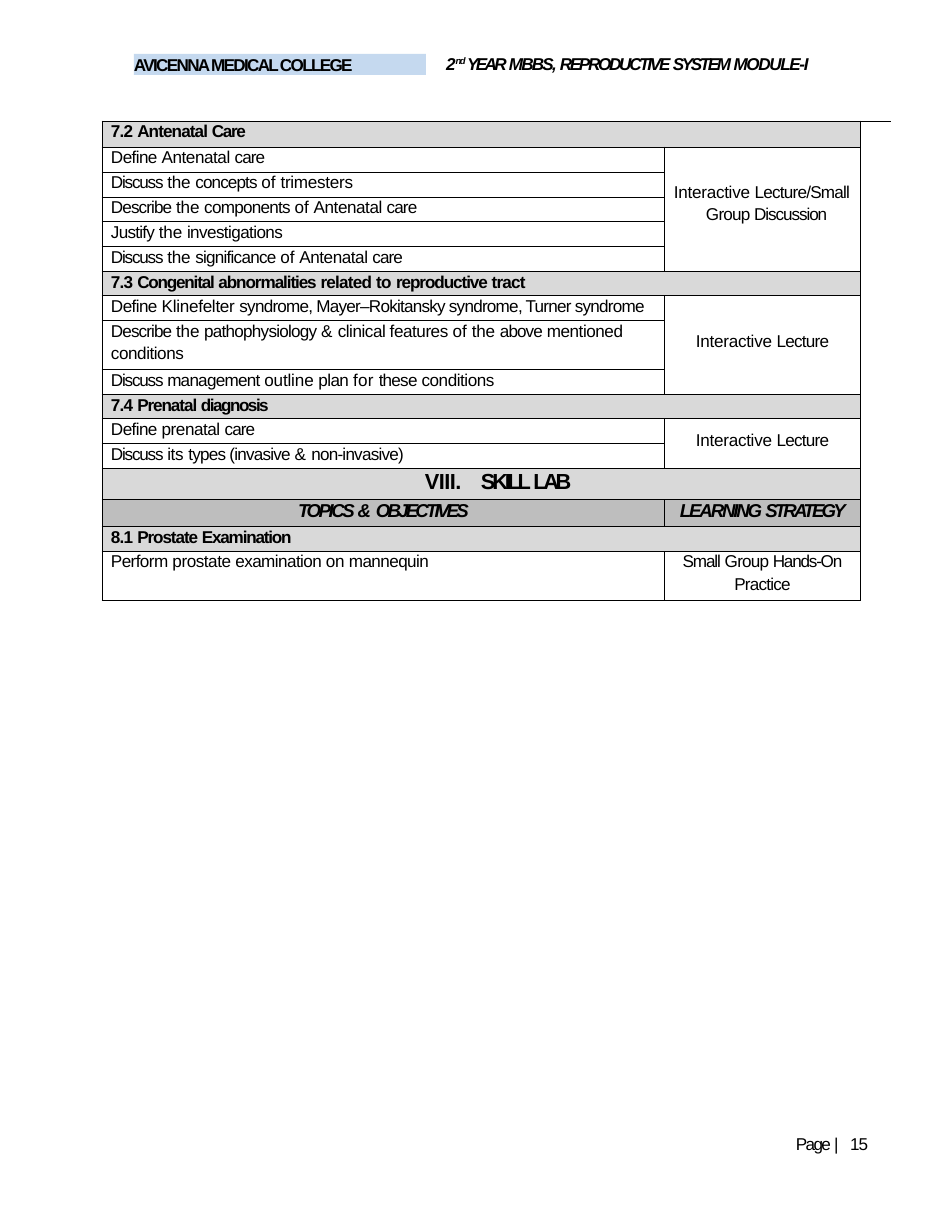
from dataclasses import dataclass

from lxml import etree
from pptx import Presentation
from pptx.dml.color import RGBColor
from pptx.enum.text import MSO_ANCHOR, MSO_AUTO_SIZE, PP_ALIGN
from pptx.oxml.ns import qn
from pptx.util import Emu, Pt

LEFT, CENTER = PP_ALIGN.LEFT, PP_ALIGN.CENTER
TOP, NO_AUTOFIT = MSO_ANCHOR.TOP, MSO_AUTO_SIZE.NONE
TITLE_ONLY = 5
EMU_PER_PX = 914400 / 112


@dataclass(frozen=True)
class Theme:
    font: str = "Arial"
    ink: str = "000000"
    banner: str = "C5D9EF"
    section: str = "D9D9D9"
    heading: str = "BEBEBE"
    body: float = 11
    superscript: float = 10.5
    heading_size: float = 12
    chapter_size: float = 14
    border: float = 0.5


THEME = Theme()


@dataclass
class Line:
    runs: list
    size: float = THEME.body
    bold: bool = False
    italic: bool = False
    align: int = LEFT
    indent: int = 9
    first: int = 0
    spacing: float = None
    before: float = 0
    tab: int = 0


@dataclass
class Row:
    height: int
    topic: list
    strategy: list = None
    span: int = 1
    margin: int = 0
    fill: str = None
    section: bool = False


def px(value):
    return Emu(round(value * EMU_PER_PX))


def write_lines(frame, lines):
    frame.word_wrap = True
    for index, line in enumerate(lines):
        paragraph = frame.paragraphs[0] if index == 0 else frame.add_paragraph()
        properties = paragraph._p.get_or_add_pPr()
        properties.set("marL", str(px(line.indent)))
        properties.set("indent", str(px(line.first)))
        paragraph.alignment = line.align
        if line.spacing:
            paragraph.line_spacing = line.spacing
        if line.before:
            paragraph.space_before = Pt(line.before)
        if line.tab:
            tabs = etree.SubElement(properties, qn("a:tabLst"))
            etree.SubElement(tabs, qn("a:tab"), pos=str(px(line.tab)), algn="l")
        for text, tracking, *baseline in line.runs:
            run = paragraph.add_run()
            run.text = text
            run.font.name = THEME.font
            run.font.size = Pt(THEME.superscript if baseline else line.size)
            run.font.bold, run.font.italic = line.bold, line.italic
            run.font.color.rgb = RGBColor.from_string(THEME.ink)
            run_properties = run._r.get_or_add_rPr()
            run_properties.set("spc", str(round(tracking * 100)))
            if baseline:
                run_properties.set("baseline", str(baseline[0] * 1000))


def set_margins(target, top=0):
    target.margin_left = target.margin_right = target.margin_bottom = 0
    target.margin_top = px(top)


def fill_text_shape(shape, line, top=0):
    frame = shape.text_frame
    frame.auto_size = NO_AUTOFIT
    frame.vertical_anchor = TOP
    set_margins(frame, top)
    write_lines(frame, [line])


def add_header(slide, left, top, width, height):
    banner = slide.shapes.add_textbox(px(left), px(top + 1), px(292), px(height - 1))
    banner.fill.solid()
    banner.fill.fore_color.rgb = RGBColor.from_string(THEME.banner)
    fill_text_shape(banner, Line([("AVICENNA MEDICAL COLLEGE", -1.1)], bold=True,
                                 indent=0, spacing=Pt(12.8)), 1)
    title = slide.shapes.title
    title.left, title.top = px(left + 311), px(top)
    title.width, title.height = px(width - 311), px(height)
    fill_text_shape(title, Line(
        [("2", -0.6), ("nd ", -0.9, 32), ("YEAR ", -1.7), ("MBBS, ", -1.2),
         ("REPRODUCTIVE ", -1.5), ("SYSTEM ", -1.6), ("MODULE-I", -0.9)],
        bold=True, italic=True, indent=1))


def add_footer(slide, left, top, width, height):
    footer = slide.shapes.add_textbox(px(left), px(top), px(width), px(height))
    fill_text_shape(footer, Line([("Page ", -1.1), ("| ", 2.2), ("15", -0.6)],
                                 indent=1, spacing=Pt(11.5)))


def set_borders(cell, **widths):
    properties = cell._tc.get_or_add_tcPr()
    for side in "LRTB":
        width = widths.get(side, 0)
        border = etree.SubElement(properties, qn(f"a:ln{side}"), w=str(Pt(width)))
        if width:
            solid = etree.SubElement(border, qn("a:solidFill"))
            etree.SubElement(solid, qn("a:srgbClr"), val=THEME.ink)
        else:
            etree.SubElement(border, qn("a:noFill"))


def set_fill(cell, color):
    if color:
        cell.fill.solid()
        cell.fill.fore_color.rgb = RGBColor.from_string(color)
    else:
        cell.fill.background()


def body_line(*runs, **options):
    return Line(list(runs), spacing=Pt(12.9), **options)


def objective(*runs, height=25, **options):
    return Row(height, [body_line(*runs)], **options)


def section(*runs, height=25):
    return Row(height, [body_line(*runs, bold=True)], fill=THEME.section, section=True)


def heading(*runs, **options):
    return Line(list(runs), size=THEME.heading_size, bold=True, italic=True,
                spacing=Pt(14.1), **options)


def syllabus_rows():
    define, discuss, describe = ("Define ", -0.4), ("Discuss ", -0.8), ("Describe ", -0.6)
    the, of = ("the ", -0.1), ("of ", 0)
    antenatal_care = [("Antenatal ", -0.3), ("care", -0.6)]
    lecture = [Line([("Interactive ", -0.2), ("Lecture", -0.5)], indent=32)]
    discussion = [Line([("Interactive ", -0.2), ("Lecture/Small Group", -0.5),
                        (" Discussion", -0.7)], indent=42, first=-32, spacing=1.17)]
    practice = [body_line(("Small ", -0.7), ("Group", -0.5), (" Hands-On", -0.8),
                          align=CENTER, indent=1),
                Line([("Practice", -0.5)], align=CENTER, indent=1, before=2.2)]
    return [
        section(("7.2 ", -0.5), ("Antenatal ", -0.6), ("Care", -0.9), height=26),
        objective(define, *antenatal_care, strategy=discussion, span=5, margin=33),
        objective(discuss, the, ("concepts ", -0.6), of, ("trimesters", -0.2)),
        objective(describe, the, ("components ", -0.5), of, *antenatal_care),
        objective(("Justify ", -0.5), the, ("investigations", -0.4)),
        objective(discuss, the, ("significance ", -0.5), of, *antenatal_care),
        section(("7.3 ", -0.5), ("Congenital ", -0.8), ("abnormalities ", -0.7),
                ("related ", -0.5), ("to ", -0.3), ("reproductive ", -0.7),
                ("tract", -0.5), height=24),
        objective(define, ("Klinefelter ", -0.2),
                  ("syndrome, Mayer–Rokitansky syndrome, Turner syndrome", -0.5),
                  strategy=lecture, span=3, margin=36),
        Row(49, [body_line(describe, the, ("pathophysiology ", -0.5), ("& ", 0.1),
                           ("clinical features ", -0.3), of, the, ("above ", -0.6),
                           ("mentioned", -0.3)),
                 Line([("conditions", -0.3)], before=2.2)]),
        objective(discuss, ("management ", -0.5), ("outline ", -0.1), ("plan ", -0.4),
                  ("for ", 0.1), ("these ", -0.5), ("conditions", -0.3)),
        section(("7.4 ", -0.5), ("Prenatal ", -0.7), ("diagnosis", -1), height=24),
        objective(define, ("prenatal ", -0.3), ("care", -0.6),
                  strategy=lecture, span=2, margin=12),
        objective(discuss, ("its ", -0.2), ("types (invasive ", -0.5), ("& ", 0.1),
                  ("non-invasive)", -0.5)),
        Row(31, [Line([("VIII.\t", -0.4), ("SKILL ", -2.1), ("LAB", -2.2)],
                      size=THEME.chapter_size, bold=True, indent=323, tab=435,
                      spacing=Pt(16.5))], fill=THEME.section, section=True),
        Row(27, [heading(("TOPICS ", -1.6), ("& ", -0.2), ("OBJECTIVES", -1.8),
                         align=CENTER, indent=1)],
            [heading(("LEARNING ", -1.4), ("STRATEGY", -1.8), indent=16)],
            fill=THEME.heading),
        section(("8.1 ", -0.5), ("Prostate ", -0.7), ("Examination", -0.8)),
        objective(("Perform ", -0.4), ("prostate ", -0.3), ("examination ", -0.4),
                  ("on ", -0.3), ("mannequin", -0.4), height=49, strategy=practice),
    ]


def add_syllabus(slide, left, top, width, height):
    rows = syllabus_rows()
    table = slide.shapes.add_table(len(rows), 3, px(left), px(top),
                                   px(width), px(height)).table
    table.first_row = table.horz_banding = False
    for column, column_width in zip(table.columns, (562, 196, width - 758)):
        column.width = px(column_width)
    thin = THEME.border
    span_end = 0
    for index, row in enumerate(rows):
        table.rows[index].height = px(row.height)
        topic, strategy, margin = (table.cell(index, column) for column in range(3))
        starts = row.section or bool(row.strategy)
        if starts:
            span_end = index + row.span - 1
        inner = 0 if row.section else thin
        set_borders(topic, L=thin, R=inner, T=thin, B=thin)
        set_borders(strategy, L=inner, R=thin, T=thin if starts else 0,
                    B=thin if index == span_end else 0)
        set_borders(margin, L=thin, T=0 if index else thin)
        for cell, color in ((topic, row.fill), (strategy, row.fill), (margin, None)):
            set_margins(cell)
            set_fill(cell, color)
        write_lines(topic.text_frame, row.topic)
        if row.strategy:
            strategy.margin_top = px(row.margin)
            write_lines(strategy.text_frame, row.strategy)
        for cell in (strategy, margin):
            etree.SubElement(cell.text_frame.paragraphs[-1]._p, qn("a:endParaRPr"),
                             sz=str(round(THEME.body * 100)))
    for index, row in enumerate(rows):
        if row.section:
            table.cell(index, 0).merge(table.cell(index, 1))
        elif row.span > 1:
            table.cell(index, 1).merge(table.cell(index + row.span - 1, 1))
    table.cell(0, 2).merge(table.cell(len(rows) - 1, 2))


def main():
    presentation = Presentation()
    presentation.slide_width, presentation.slide_height = px(952), px(1232)
    slide = presentation.slides.add_slide(presentation.slide_layouts[TITLE_ONLY])
    add_header(slide, 134, 53, 765, 22)
    add_syllabus(slide, 102, 121, 789, 480)
    add_footer(slide, 795, 1136, 90, 20)
    presentation.save("out.pptx")


if __name__ == "__main__":
    main()
